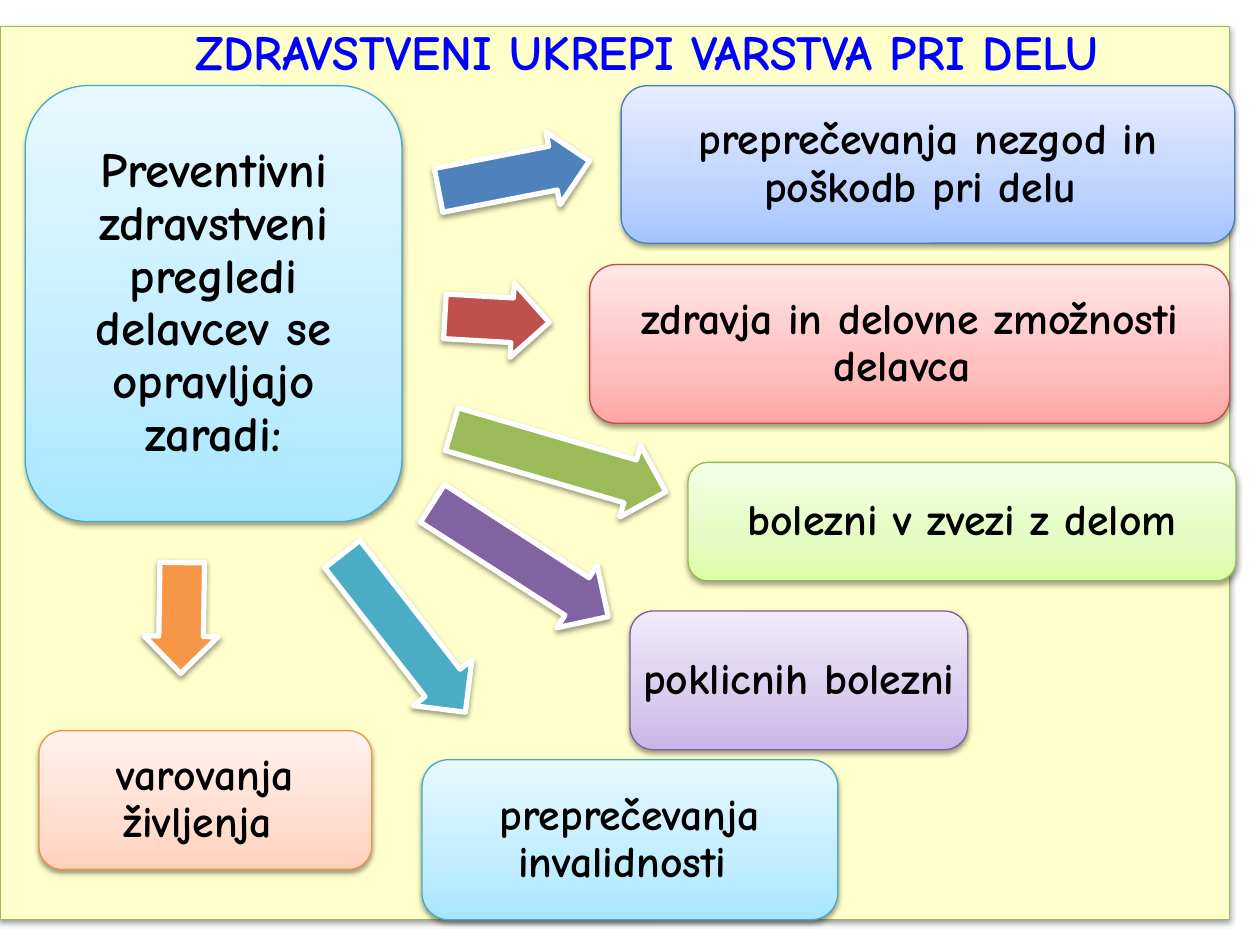
from copy import deepcopy

from lxml.etree import SubElement
from pptx import Presentation
from pptx.dml.color import RGBColor
from pptx.enum.shapes import MSO_SHAPE
from pptx.enum.text import MSO_ANCHOR, MSO_AUTO_SIZE, PP_ALIGN
from pptx.oxml.ns import qn
from pptx.util import Inches, Pt

# Content: places are left, top, width, height in inches
TITLE = "ZDRAVSTVENI UKREPI VARSTVA PRI DELU"
TITLE_PLACE = (0, 0.21, 9.76, 7.09)
CENTRE = ("Preventivni zdravstveni pregledi delavcev se opravljajo zaradi:",
          "aqua", (0.2, 0.68, 2.99, 3.46))
# Each reason: text, colour name, box place, arrow left, top, width, rotation
REASONS = [
    ("varovanja življenja ", "orange", (0.31, 5.8, 2.64, 1.1), (1, 4.61, 0.88, 90.8)),
    ("zdravja in delovne zmožnosti delavca ", "red", (4.68, 2.1, 5.08, 1.26),
     (3.53, 2.24, 0.83, 3.3)),
    ("preprečevanja nezgod in poškodb pri delu ", "blue", (4.93, 0.68, 4.87, 1.25),
     (3.47, 1.1, 1.22, 349)),
    ("poklicnih bolezni ", "purple", (5, 4.85, 2.68, 1.1), (3.3, 4.15, 1.66, 32.8)),
    ("bolezni v zvezi z delom", "green", (5.46, 3.67, 4.35, 0.94), (3.55, 3.36, 1.77, 16.3)),
    ("preprečevanja invalidnosti ", "aqua", (3.35, 6.03, 3.3, 1.27), (2.41, 4.73, 1.59, 52.1)),
]
ARROW_HEIGHT = 0.59

THEME = {
    "font": "Comic Neue",
    "large": 28, "normal": 25,
    "text": "000000", "title": "0000FF",
    "panel": "FFFFCC", "panel_line": "98B955", "arrow_line": "FFFFFF",
    "shadow": "000000",
    "stops": (0, 0.35, 1),
    # arrow fill, box outline, box gradient from bottom to top
    "aqua": ("4BACC6", "46AAC5", ("A7E6FF", "C1EDFF", "E7F8FF")),
    "orange": ("F79646", "F69240", ("FFD2BD", "FFDED0", "FFF2ED")),
    "red": ("C0504D", "BF4C48", ("FFA6A5", "FFC0BF", "FFE7E7")),
    "blue": ("4F81BD", "4B7EBC", ("A4C4FF", "BFD4FF", "E6EEFF")),
    "purple": ("8064A2", "7D60A0", ("C9B5E8", "D8CBEE", "F0EAF9")),
    "green": ("9BBB59", "98B955", ("DAFDA7", "E4FCC2", "F5FFE7")),
}


def rgb(value):
    return RGBColor.from_string(value)


def fill_solid(shape, color):
    shape.fill.solid()
    shape.fill.fore_color.rgb = rgb(color)


def fill_gradient(shape, colors):
    shape.fill.gradient()
    shape.fill.gradient_angle = 90
    stop_list = shape.element.spPr.find(".//" + qn("a:gsLst"))
    stop_list.append(deepcopy(stop_list[0]))
    for stop, position, color in zip(shape.fill.gradient_stops, THEME["stops"], colors):
        stop.position = position
        stop.color.rgb = rgb(color)


def outline(shape, color, width):
    shape.line.color.rgb = rgb(color)
    shape.line.width = Pt(width)


def add_shadow(shape):
    shape.shadow.inherit = False
    effects = shape.element.spPr.find(qn("a:effectLst"))
    outer = SubElement(effects, qn("a:outerShdw"), blurRad=str(Pt(3.1)),
                       dist=str(Pt(1.6)), dir="5400000", rotWithShape="0")
    color = SubElement(outer, qn("a:srgbClr"), val=THEME["shadow"])
    SubElement(color, qn("a:alpha"), val="38000")


def write_text(shape, text, *, size, color=THEME["text"], anchor=MSO_ANCHOR.MIDDLE,
               inset=0.03, left_inset=None, line_spacing=0.9):
    frame = shape.text_frame
    frame.word_wrap = True
    frame.auto_size = MSO_AUTO_SIZE.NONE
    frame.vertical_anchor = anchor
    frame.margin_top = frame.margin_right = frame.margin_bottom = Inches(inset)
    frame.margin_left = Inches(inset if left_inset is None else left_inset)
    para = frame.paragraphs[0]
    para.alignment = PP_ALIGN.CENTER
    para.line_spacing = line_spacing
    span = para.add_run()
    span.text = text
    span.font.name = THEME["font"]
    span.font.size = Pt(size)
    span.font.bold = True
    span.font.color.rgb = rgb(color)


def add_box(page, text, color_name, place, size, inset=0.03):
    box = page.shapes.add_shape(MSO_SHAPE.ROUNDED_RECTANGLE, *map(Inches, place))
    _, line_color, gradient = THEME[color_name]
    fill_gradient(box, gradient)
    outline(box, line_color, 0.75)
    add_shadow(box)
    write_text(box, text, size=size, inset=inset)


def add_arrow(page, color_name, left, top, width, rotation):
    arrow = page.shapes.add_shape(
        MSO_SHAPE.RIGHT_ARROW, *map(Inches, (left, top, width, ARROW_HEIGHT)))
    arrow.adjustments[0] = 0.6
    arrow.rotation = rotation
    fill_solid(arrow, THEME[color_name][0])
    outline(arrow, THEME["arrow_line"], 3)
    add_shadow(arrow)


def main():
    deck = Presentation()
    deck.slide_width, deck.slide_height = Inches(10), Inches(7.5)
    page = deck.slides.add_slide(deck.slide_layouts[5])

    # Title on the yellow panel
    title = page.shapes.title
    title.left, title.top, title.width, title.height = map(Inches, TITLE_PLACE)
    fill_solid(title, THEME["panel"])
    outline(title, THEME["panel_line"], 0.75)
    add_shadow(title)
    write_text(title, TITLE, size=THEME["large"], color=THEME["title"],
               anchor=MSO_ANCHOR.TOP, inset=0.05, left_inset=0.55, line_spacing=0.8)

    # Central statement
    add_box(page, *CENTRE, size=THEME["large"], inset=0.04)

    # Arrows and the reasons they lead to
    for text, color_name, box_place, arrow_place in REASONS:
        add_arrow(page, color_name, *arrow_place)
        add_box(page, text, color_name, box_place, size=THEME["normal"])

    deck.save("out.pptx")


if __name__ == "__main__":
    main()
